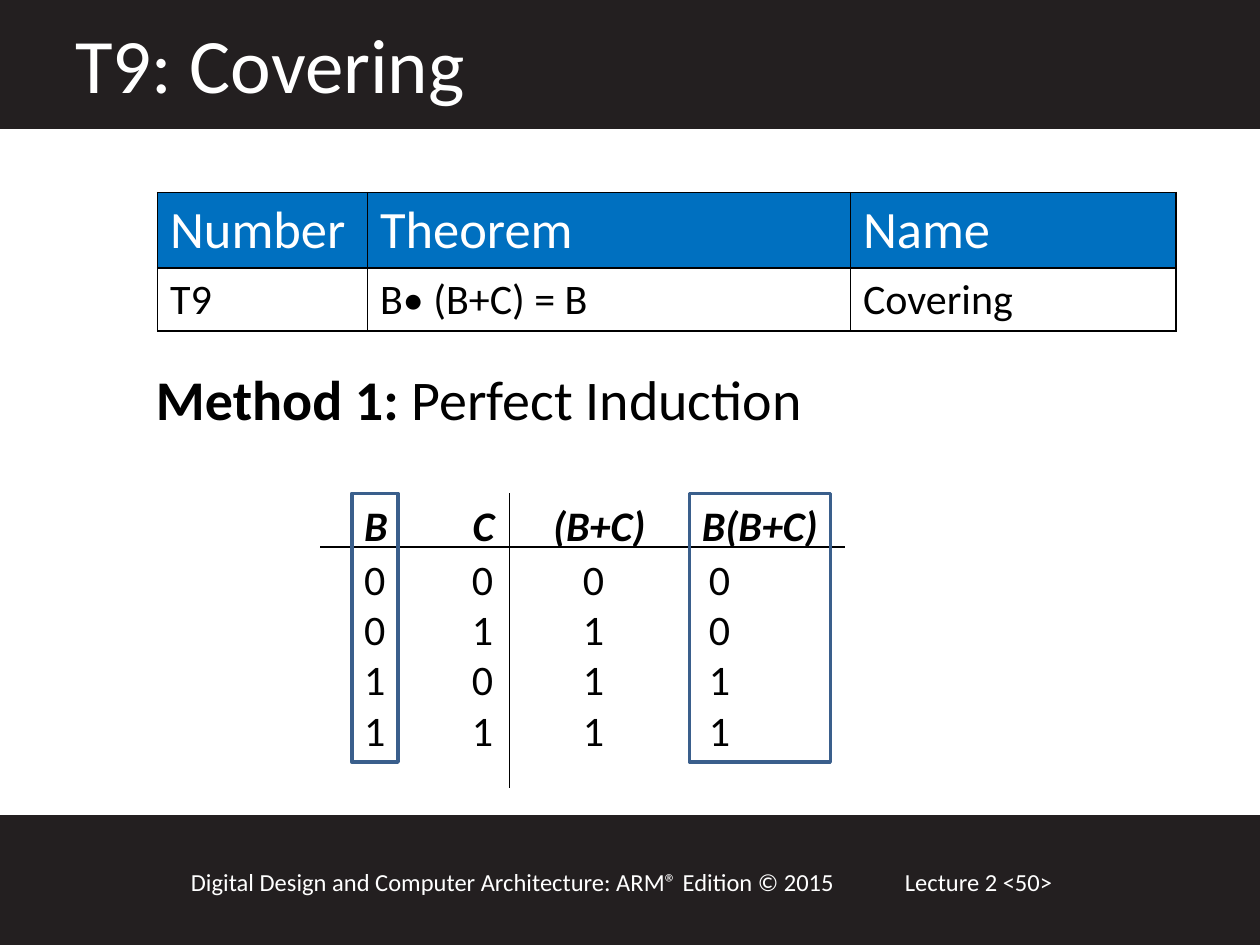
from dataclasses import dataclass

from lxml import etree
from pptx import Presentation
from pptx.dml.color import RGBColor
from pptx.enum.shapes import MSO_CONNECTOR, MSO_SHAPE
from pptx.oxml.ns import qn
from pptx.util import Pt

RECTANGLE = MSO_SHAPE.RECTANGLE
STRAIGHT = MSO_CONNECTOR.STRAIGHT

COLOURS = {
    "band": "231F20",
    "header": "0070C0",
    "frame": "3A5F8C",
    "ink": "000000",
    "paper": "FFFFFF",
}

TRUTH_LEFT, TRUTH_TOP, HEADING_HEIGHT = 201, 282, 30.5
ROWS_TOP = TRUTH_TOP + HEADING_HEIGHT
ROWS_HEIGHT = 124
COLUMN_WIDTHS = (120, 276, 186)
ROW_HEIGHTS = (43.2, 36)


@dataclass(frozen=True)
class Box:
    left: float
    top: float
    width: float
    height: float

    def lengths(self) -> tuple:
        return tuple(Pt(v) for v in (self.left, self.top, self.width, self.height))


@dataclass(frozen=True)
class Span:
    text: str
    bold: bool = False
    italic: bool = False


@dataclass(frozen=True)
class Passage:
    box: Box
    lines: tuple
    size: float
    colour: str = "ink"
    tabs: tuple = ()


@dataclass(frozen=True)
class Panel:
    box: Box
    outline: str
    fill: str = ""


@dataclass(frozen=True)
class Rule:
    start: tuple
    end: tuple


def rgb(name: str) -> RGBColor:
    return RGBColor.from_string(COLOURS[name])


def write_span(paragraph, span: Span, size: float, colour: str) -> None:
    run = paragraph.add_run()
    run.text = span.text
    formats = {"name": "Calibri", "size": Pt(size), "bold": span.bold, "italic": span.italic}
    for attribute, value in formats.items():
        setattr(run.font, attribute, value)
    run.font.color.rgb = rgb(colour)


def draw_passage(slide, passage: Passage) -> None:
    frame = slide.shapes.add_textbox(*passage.box.lengths()).text_frame
    frame.word_wrap = True
    for index, spans in enumerate(passage.lines):
        paragraph = frame.add_paragraph() if index else frame.paragraphs[0]
        if passage.tabs:
            properties = paragraph._p.get_or_add_pPr()
            stops = etree.SubElement(properties, qn("a:tabLst"))
            for position in passage.tabs:
                etree.SubElement(stops, qn("a:tab"), pos=str(Pt(position)), algn="l")
        for span in spans:
            write_span(paragraph, span, passage.size, passage.colour)


def draw_panel(slide, panel: Panel) -> None:
    shape = slide.shapes.add_shape(RECTANGLE, *panel.box.lengths())
    shape.shadow.inherit = False
    if panel.fill:
        shape.fill.solid()
        shape.fill.fore_color.rgb = rgb(panel.fill)
    else:
        shape.fill.background()
    shape.line.color.rgb = rgb(panel.outline)
    shape.line.width = Pt(2)


def draw_rule(slide, rule: Rule) -> None:
    ends = (Pt(v) for v in (*rule.start, *rule.end))
    connector = slide.shapes.add_connector(STRAIGHT, *ends)
    connector.line.color.rgb = rgb("ink")
    connector.line.width = Pt(0.75)
    etree.SubElement(connector._element.spPr, qn("a:effectLst"))


def border_cell(cell) -> None:
    properties = cell._tc.get_or_add_tcPr()
    for side in ("lnL", "lnR", "lnT", "lnB"):
        edge = etree.SubElement(properties, qn(f"a:{side}"), w=str(Pt(1)))
        fill = etree.SubElement(edge, qn("a:solidFill"))
        etree.SubElement(fill, qn("a:srgbClr"), val=COLOURS["ink"])


def draw_theorem_table(slide) -> None:
    rows = (
        (("Number", "Theorem", "Name"), 30, "paper", "header"),
        (("T9", "B• (B+C) = B", "Covering"), 24, "ink", "paper"),
    )
    box = Box(90, 110, sum(COLUMN_WIDTHS), sum(ROW_HEIGHTS))
    table = slide.shapes.add_table(len(rows), len(COLUMN_WIDTHS), *box.lengths()).table
    for column, width in zip(table.columns, COLUMN_WIDTHS):
        column.width = Pt(width)
    for row, height, (texts, size, colour, fill) in zip(table.rows, ROW_HEIGHTS, rows):
        row.height = Pt(height)
        for cell, text in zip(row.cells, texts):
            border_cell(cell)
            cell.fill.solid()
            cell.fill.fore_color.rgb = rgb(fill)
            write_span(cell.text_frame.paragraphs[0], Span(text), size, colour)


def plain(*texts: str) -> tuple:
    return tuple((Span(text),) for text in texts)


BANDS = (
    Panel(Box(0, 466.5, 720, 73.5), "band", "band"),
    Panel(Box(0, 0, 720, 72.5), "band", "band"),
)
CAPTIONS = (
    Passage(Box(510, 492, 156, 24.5), plain("Lecture 2 <50>"), 14, "paper"),
    Passage(
        Box(102, 492, 414, 24.5),
        plain("Digital Design and Computer Architecture: ARM® Edition © 2015"),
        14,
        "paper",
    ),
    Passage(Box(36, 6, 624, 60.5), plain("T9: Covering"), 44, "paper"),
    Passage(
        Box(82, 204.5, 624, 255.5),
        ((Span("Method 1: ", bold=True), Span("Perfect Induction")),),
        32,
    ),
)
RULES = (
    Rule((183, ROWS_TOP), (483, ROWS_TOP)),
    Rule((291, TRUTH_TOP), (291, 450)),
)
TRUTH_TABLE = (
    Passage(
        Box(326, ROWS_TOP, 142, ROWS_HEIGHT),
        plain("0\t0", "1\t0", "1\t1", "1\t1"),
        24,
        tabs=(72,),
    ),
    Passage(
        Box(TRUTH_LEFT, ROWS_TOP, 90, ROWS_HEIGHT),
        plain("0\t0", "0\t1", "1\t0", "1\t1"),
        24,
        tabs=(61.5,),
    ),
    Passage(
        Box(TRUTH_LEFT, TRUTH_TOP, 369, 36),
        ((Span("B\tC\t(B+C)\tB(B+C)", bold=True, italic=True),),),
        24,
        tabs=(62, 108, 193),
    ),
)
HIGHLIGHTS = tuple(
    Panel(Box(left, TRUTH_TOP, width, 153.5), "frame")
    for left, width in ((TRUTH_LEFT, 26.5), (394, 80.5))
)


def main() -> None:
    deck = Presentation()
    deck.slide_width, deck.slide_height = Pt(720), Pt(540)
    slide = deck.slides.add_slide(deck.slide_layouts[6])
    for band in BANDS:
        draw_panel(slide, band)
    for caption in CAPTIONS:
        draw_passage(slide, caption)
    for rule in RULES:
        draw_rule(slide, rule)
    draw_theorem_table(slide)
    for passage in TRUTH_TABLE:
        draw_passage(slide, passage)
    for highlight in HIGHLIGHTS:
        draw_panel(slide, highlight)
    deck.save("out.pptx")


if __name__ == "__main__":
    main()
